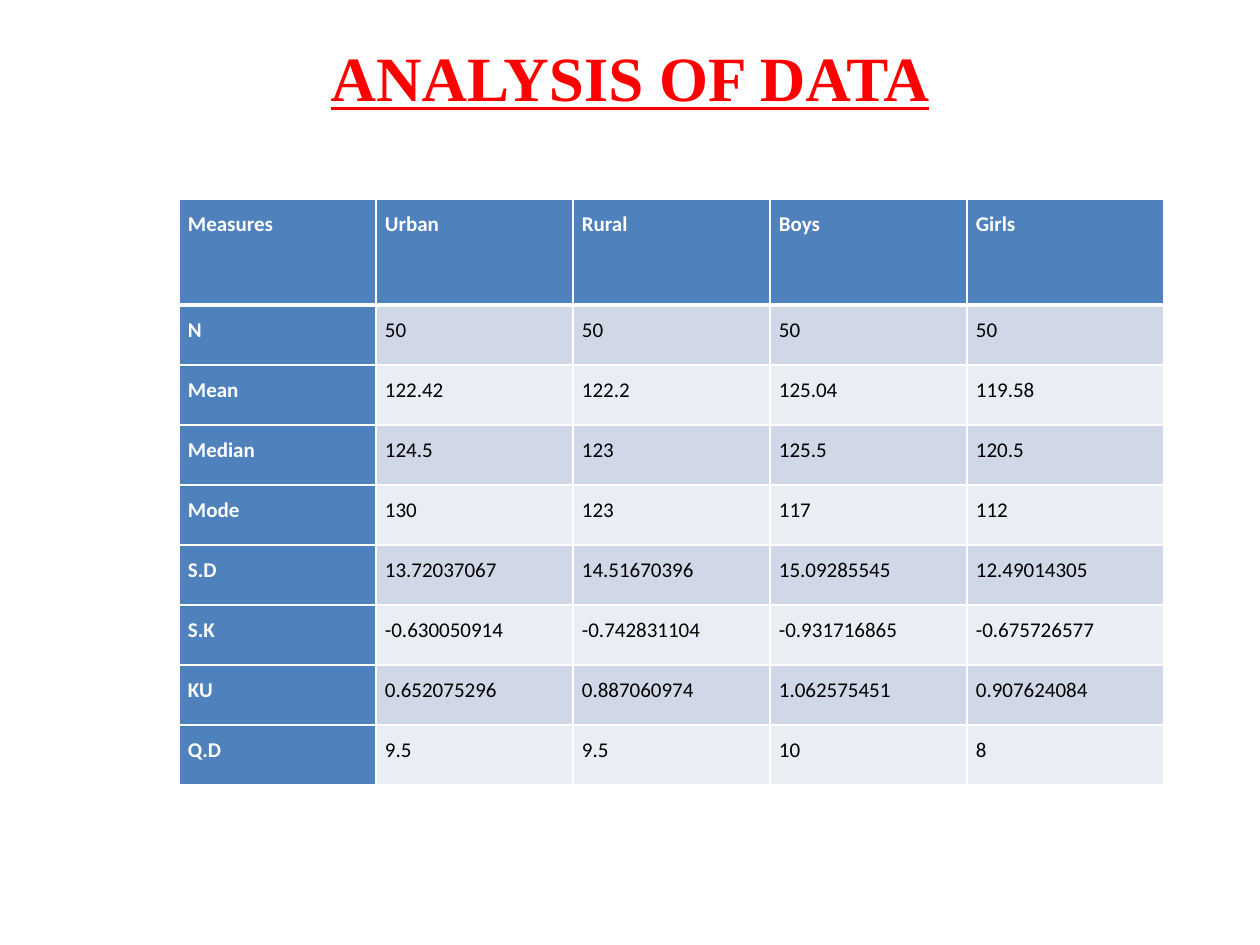
import pptx
import pptx.dml.color
import pptx.enum.text
import pptx.oxml
import pptx.oxml.ns
import pptx.util

RGBColor = pptx.dml.color.RGBColor
PP_ALIGN = pptx.enum.text.PP_ALIGN

RED = RGBColor(0xFF, 0x00, 0x00)
WHITE = RGBColor(0xFF, 0xFF, 0xFF)
BLACK = RGBColor(0x00, 0x00, 0x00)
BLUE = RGBColor(0x4F, 0x81, 0xBD)
BANDS = (RGBColor(0xD0, 0xD8, 0xE8), RGBColor(0xE9, 0xED, 0xF4))

PX_PER_INCH = 126

MEASURES = [
    ("Measures", "Urban", "Rural", "Boys", "Girls"),
    ("N", "50", "50", "50", "50"),
    ("Mean", "122.42", "122.2", "125.04", "119.58"),
    ("Median", "124.5", "123", "125.5", "120.5"),
    ("Mode", "130", "123", "117", "112"),
    ("S.D", "13.72037067", "14.51670396", "15.09285545", "12.49014305"),
    ("S.K", "-0.630050914", "-0.742831104", "-0.931716865", "-0.675726577"),
    ("KU", "0.652075296", "0.887060974", "1.062575451", "0.907624084"),
    ("Q.D", "9.5", "9.5", "10", "8"),
]


def px(n):
    return pptx.util.Emu(round(n * pptx.util.Inches(1) / PX_PER_INCH))


class SlideBuilder:
    """Holds the text style and the slide being built."""

    title_font, title_size = "Times New Roman", 36
    body_font, body_size = "Calibri", 12

    def __init__(self, slide):
        self.slide = slide

    def title(self, text, left, top, width, height):
        sp = self.slide.shapes.title
        sp.left, sp.top, sp.width, sp.height = map(px, (left, top, width, height))
        tf = sp.text_frame
        tf.text = text
        tf.word_wrap = False
        tf.auto_size = pptx.enum.text.MSO_AUTO_SIZE.SHAPE_TO_FIT_TEXT
        tf.vertical_anchor = pptx.enum.text.MSO_ANCHOR.TOP
        p = tf.paragraphs[0]
        p.alignment = PP_ALIGN.CENTER
        font = p.runs[0].font
        font.name, font.size = self.title_font, pptx.util.Pt(self.title_size)
        font.bold = font.underline = True
        font.color.rgb = RED

    def table(self, rows, left, top, col_width, header_height, row_height):
        n_rows, n_cols = len(rows), len(rows[0])
        height = header_height + row_height * (n_rows - 1)
        frame = self.slide.shapes.add_table(
            n_rows, n_cols, px(left), px(top), px(col_width * n_cols), px(height))
        table = frame.table
        table.first_col = True
        for column in table.columns:
            column.width = px(col_width)
        for i, row in enumerate(rows):
            table.rows[i].height = px(row_height if i else header_height)
            for j, text in enumerate(row):
                heading = i == 0 or j == 0
                cell = table.cell(i, j)
                self.borders(cell, top=3 if i == 1 else 1, bottom=3 if i == 0 else 1)
                self.cell(cell, text, heading, BLUE if heading else BANDS[(i - 1) % 2])

    def cell(self, cell, text, heading, fill):
        cell.fill.solid()
        cell.fill.fore_color.rgb = fill
        cell.margin_left = cell.margin_right = px(9)
        cell.margin_top = cell.margin_bottom = 0
        p = cell.text_frame.paragraphs[0]
        p.text = text
        p.alignment = PP_ALIGN.JUSTIFY
        p.line_spacing = 1.5
        font = p.runs[0].font
        font.name, font.size = self.body_font, pptx.util.Pt(self.body_size)
        font.bold = heading
        font.color.rgb = WHITE if heading else BLACK

    def borders(self, cell, top, bottom):
        """Draw white cell edges, widths in points; call before the fill is set."""
        tc_pr = cell._tc.get_or_add_tcPr()
        for side, width in (("L", 1), ("R", 1), ("T", top), ("B", bottom)):
            tc_pr.append(pptx.oxml.parse_xml(
                f'<a:ln{side} {pptx.oxml.ns.nsdecls("a")} w="{pptx.util.Pt(width)}">'
                f'<a:solidFill><a:srgbClr val="{WHITE}"/></a:solidFill></a:ln{side}>'))


def main():
    prs = pptx.Presentation()
    prs.slide_width, prs.slide_height = px(1260), px(945)
    s = SlideBuilder(prs.slides.add_slide(prs.slide_layouts[5]))
    s.title("ANALYSIS OF DATA", 315, 32, 630, 165)
    s.table(MEASURES, left=179, top=199, col_width=197,
            header_height=106, row_height=60)
    prs.save("out.pptx")


if __name__ == "__main__":
    main()
